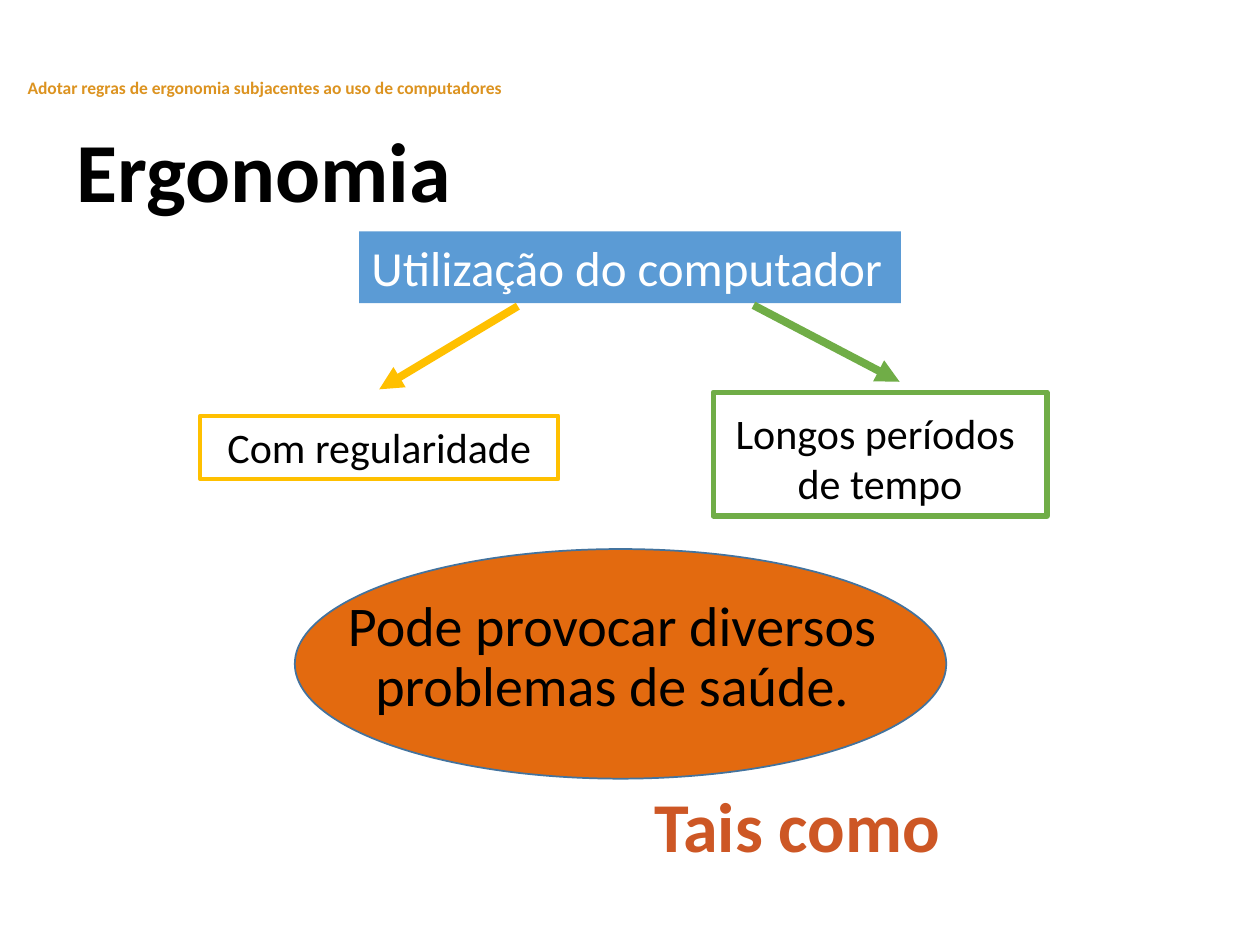
import pptx
import pptx.util
from pptx.dml.color import RGBColor
from pptx.enum.shapes import MSO_CONNECTOR, MSO_SHAPE
from pptx.enum.text import MSO_ANCHOR, PP_ALIGN
from pptx.oxml.ns import qn
from lxml import etree

Inches, Pt = pptx.util.Inches, pptx.util.Pt

WIDE, HIGH = 10, 7.5
FONT = "Calibri"
COLORS = {
    "black": "000000", "white": "FFFFFF", "blue": "5B9BD5", "edge": "43739E",
    "gold": "FFC000", "green": "70AD47", "orange": "E36A0F",
    "rust": "CD5725", "amber": "DC9320",
}
TIGHT = Pt(34)

# Each place is left, top, width, height as shares of the slide.
SHAPES = [
    (MSO_SHAPE.OVAL, (.234, .581, .517, .243), "orange", "edge", 1),
    (MSO_SHAPE.RECTANGLE, (.285, .245, .43, .076), "blue", None, 0),
    (MSO_SHAPE.RECTANGLE, (.159, .44, .284, .067), None, "gold", 2.5),
    (MSO_SHAPE.RECTANGLE, (.566, .415, .265, .131), None, "green", 3),
]
EFFECT, CAUSE, OFTEN, LONG = range(len(SHAPES))

SHAPE_TEXTS = [
    (CAUSE, ["Utilização do computador"],
     dict(size=28, color="white", align=PP_ALIGN.LEFT, wrap=False)),
    (OFTEN, ["Com regularidade"], dict(size=24)),
    (LONG, ["Longos períodos ", "de tempo"], dict(size=24, gaps=[TIGHT, None])),
]
LABELS = [
    ((.251, .627, .48, .14), ["Pode provocar diversos ", "problemas de saúde. "],
     dict(size=32, gaps=[TIGHT, TIGHT])),
    ((.051, .131, .718, .111), ["Ergonomia"],
     dict(size=48, bold=True, align=PP_ALIGN.LEFT, gaps=[.9])),
    ((.508, .847, .249, .081), ["Tais como"],
     dict(size=40, bold=True, color="rust", gaps=[TIGHT], wrap=False)),
    ((.012, .077, .402, .056),
     ["Adotar regras de ergonomia subjacentes ao uso de computadores"],
     dict(size=10, bold=True, color="amber", align=PP_ALIGN.LEFT, gaps=[.9])),
]
# Start and end points, as shares of the slide.
ARROWS = [
    ((.411, .324), (.301, .412), "gold"),
    ((.598, .323), (.714, .404), "green"),
]


def rgb(name):
    return RGBColor.from_string(COLORS[name])


def scale(shares):
    """Turn x, y, x, y shares of the slide into lengths."""
    return [Inches(part * (HIGH if i % 2 else WIDE)) for i, part in enumerate(shares)]


def write(frame, lines, size, color="black", bold=False,
          align=PP_ALIGN.CENTER, gaps=(), wrap=True):
    frame.word_wrap = wrap
    frame.vertical_anchor = MSO_ANCHOR.TOP
    for i, line in enumerate(lines):
        para = frame.add_paragraph() if i else frame.paragraphs[0]
        para.alignment = align
        if i < len(gaps):
            para.line_spacing = gaps[i]
        run = para.add_run()
        run.text = line
        font = run.font
        font.name, font.size, font.bold = FONT, Pt(size), bold
        font.color.rgb = rgb(color)


def draw(slide, kind, place, fill, edge, width):
    shape = slide.shapes.add_shape(kind, *scale(place))
    shape.shadow.inherit = False
    if fill:
        shape.fill.solid()
        shape.fill.fore_color.rgb = rgb(fill)
    else:
        shape.fill.background()
    if edge:
        shape.line.color.rgb = rgb(edge)
        shape.line.width = Pt(width)
    else:
        shape.line.fill.background()
    return shape


def point(slide, start, end, color):
    """Draw an arrow from start to end."""
    arrow = slide.shapes.add_connector(MSO_CONNECTOR.STRAIGHT, *scale(start + end))
    arrow.line.color.rgb = rgb(color)
    arrow.line.width = Pt(4.5)
    etree.SubElement(arrow.line._get_or_add_ln(), qn("a:tailEnd"), type="triangle")
    etree.SubElement(arrow._element.spPr, qn("a:effectLst"))


def main():
    deck = pptx.Presentation()
    deck.slide_width, deck.slide_height = Inches(WIDE), Inches(HIGH)
    slide = deck.slides.add_slide(deck.slide_layouts[6])
    shapes = [draw(slide, *item) for item in SHAPES]
    for which, lines, style in SHAPE_TEXTS:
        write(shapes[which].text_frame, lines, **style)
    for place, lines, style in LABELS:
        box = slide.shapes.add_textbox(*scale(place))
        write(box.text_frame, lines, **style)
    for arrow in ARROWS:
        point(slide, *arrow)
    deck.save("out.pptx")


if __name__ == "__main__":
    main()
